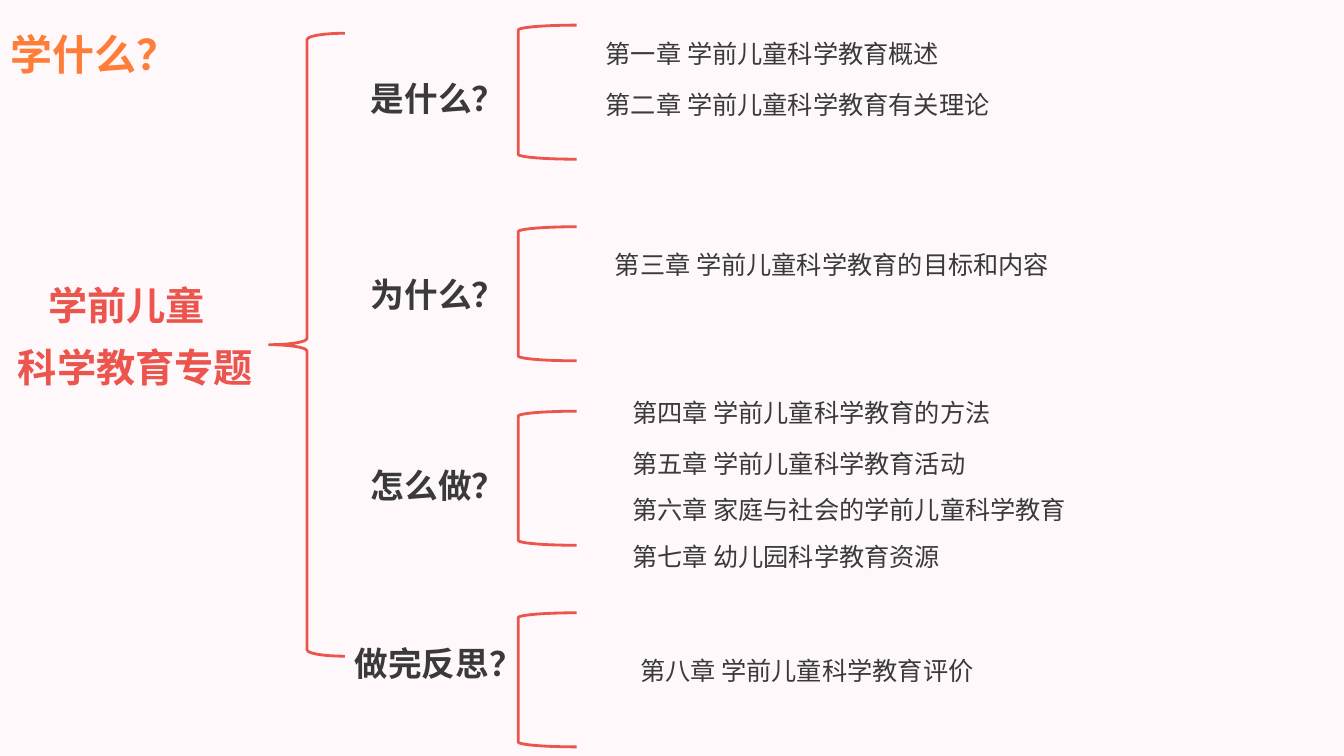
from lxml.etree import SubElement
from pptx import Presentation
from pptx.dml.color import RGBColor
from pptx.enum.lang import MSO_LANGUAGE_ID as Lang
from pptx.enum.shapes import MSO_SHAPE as Shape
from pptx.enum.text import MSO_ANCHOR as Anchor, MSO_AUTO_SIZE as Fit, PP_ALIGN as Align
from pptx.oxml.ns import qn
from pptx.util import Inches, Pt

RED = RGBColor(0xEB, 0x55, 0x4D)
ORANGE = RGBColor(0xFE, 0x7D, 0x39)
DARK = RGBColor(0x3A, 0x3A, 0x3A)
PINK = RGBColor(0xFF, 0xF8, 0xFA)

HEAD = dict(name="Noto Sans CJK SC", size=Pt(30), bold=True)
TOPIC = dict(name="Noto Sans CJK SC", size=Pt(28), bold=True)
LABEL = dict(name="Calibri", size=Pt(24), bold=True)
ITEM = dict(name="Calibri", size=Pt(18), bold=False)

GROUPS = [
    ((3.58, 0.25), "是什么？", 0.47, 5.91, [
        (0.08, "第一章 学前儿童科学教育概述"),
        (0.59, "第二章 学前儿童科学教育有关理论")]),
    ((3.58, 2.25), "为什么？", 0.42, 6, [
        (0.17, "第三章 学前儿童科学教育的目标和内容")]),
    ((3.58, 4.08), "怎么做？", 0.48, 6.17, [
        (-0.19, "第四章 学前儿童科学教育的方法"),
        (0.32, "第五章 学前儿童科学教育活动"),
        (0.78, "第六章 家庭与社会的学前儿童科学教育"),
        (1.24, "第七章 幼儿园科学教育资源")]),
    ((3.42, 6.08), "做完反思？", 0.25, 6.25, [
        (0.37, "第八章 学前儿童科学教育评价")]),
]


def put(obj, style):
    """Set each attribute of a style on an object."""
    for key, value in style.items():
        setattr(obj, key, value)


def write(para, text, style, color):
    """Add one styled Chinese run to a paragraph."""
    run = para.add_run()
    run.text = text
    put(run.font, style)
    run.font.color.rgb = color
    run.font.language_id = Lang.SIMPLIFIED_CHINESE
    SubElement(run.font._element, qn("a:ea"), typeface="Calibri")


def add_text(slide, box, text, style, color=DARK):
    """Add a one-line text box."""
    frame = slide.shapes.add_textbox(*map(Inches, box)).text_frame
    put(frame, dict(word_wrap=True, auto_size=Fit.SHAPE_TO_FIT_TEXT, margin_right=0))
    write(frame.paragraphs[0], text, style, color)


def add_brace(slide, kind, box):
    """Add a red brace or bracket."""
    brace = slide.shapes.add_shape(kind, *map(Inches, box))
    brace.shadow.inherit = False
    brace.fill.background()
    brace.line.color.rgb = RED
    brace.line.width = Pt(2)


def add_title(slide, box):
    """Place and format the slide title."""
    title = slide.shapes.title
    put(title, dict(zip(("left", "top", "width", "height"), map(Inches, box))))
    frame = title.text_frame
    put(frame, dict(word_wrap=True, auto_size=Fit.SHAPE_TO_FIT_TEXT,
                    vertical_anchor=Anchor.TOP))
    para = frame.paragraphs[0]
    put(para, dict(alignment=Align.LEFT, line_spacing=1.4, space_before=Pt(0)))
    write(para, "学什么？", HEAD, ORANGE)


def add_topic(slide, box):
    """Add the two-line topic and the brace to its right."""
    left, top, *_ = box
    frame = slide.shapes.add_textbox(*map(Inches, box)).text_frame
    put(frame, dict(word_wrap=True, vertical_anchor=Anchor.MIDDLE, margin_top=Inches(0.16)))
    first, last = frame.paragraphs[0], frame.add_paragraph()
    for para, text in ((first, "学前儿童"), (last, "科学教育专题")):
        put(para, dict(line_spacing=1.2, space_before=Pt(3.8)))
        write(para, text, TOPIC, RED)
    first._p.get_or_add_pPr().set("marL", str(Inches(0.3)))
    add_brace(slide, Shape.LEFT_BRACE, (left + 2.59, top - 1.84, 0.75, 6.18))


def add_group(slide, spot, label, drop, indent, items):
    """Add a question, its bracket and its chapters."""
    left, top = spot
    add_text(slide, (left, top + drop, 1.8, 0.5), label, LABEL)
    add_brace(slide, Shape.LEFT_BRACKET, (5.14, top, 0.58, 1.33))
    for down, text in items:
        add_text(slide, (indent, top + down, 4.85, 0.4), text, ITEM)


def main():
    """Build and save the slide."""
    deck = Presentation()
    deck.slide_width, deck.slide_height = Inches(13.33), Inches(7.5)
    slide = deck.slides.add_slide(deck.slide_layouts[5])
    slide.background.fill.solid()
    slide.background.fill.fore_color.rgb = PINK
    add_title(slide, (0, 0.03, 6.67, 0.81))
    add_topic(slide, (0.08, 2.17, 5.83, 2.12))
    for group in GROUPS:
        add_group(slide, *group)
    deck.save("out.pptx")


if __name__ == "__main__":
    main()
